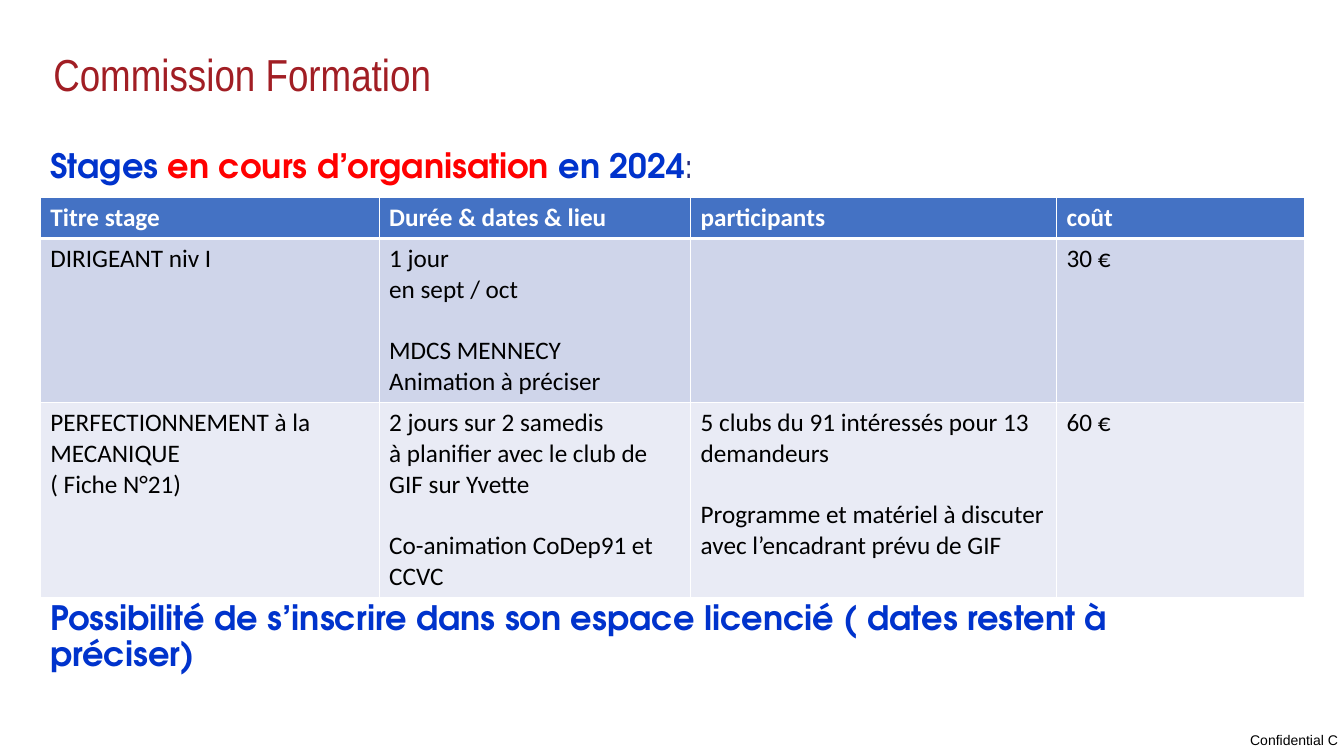
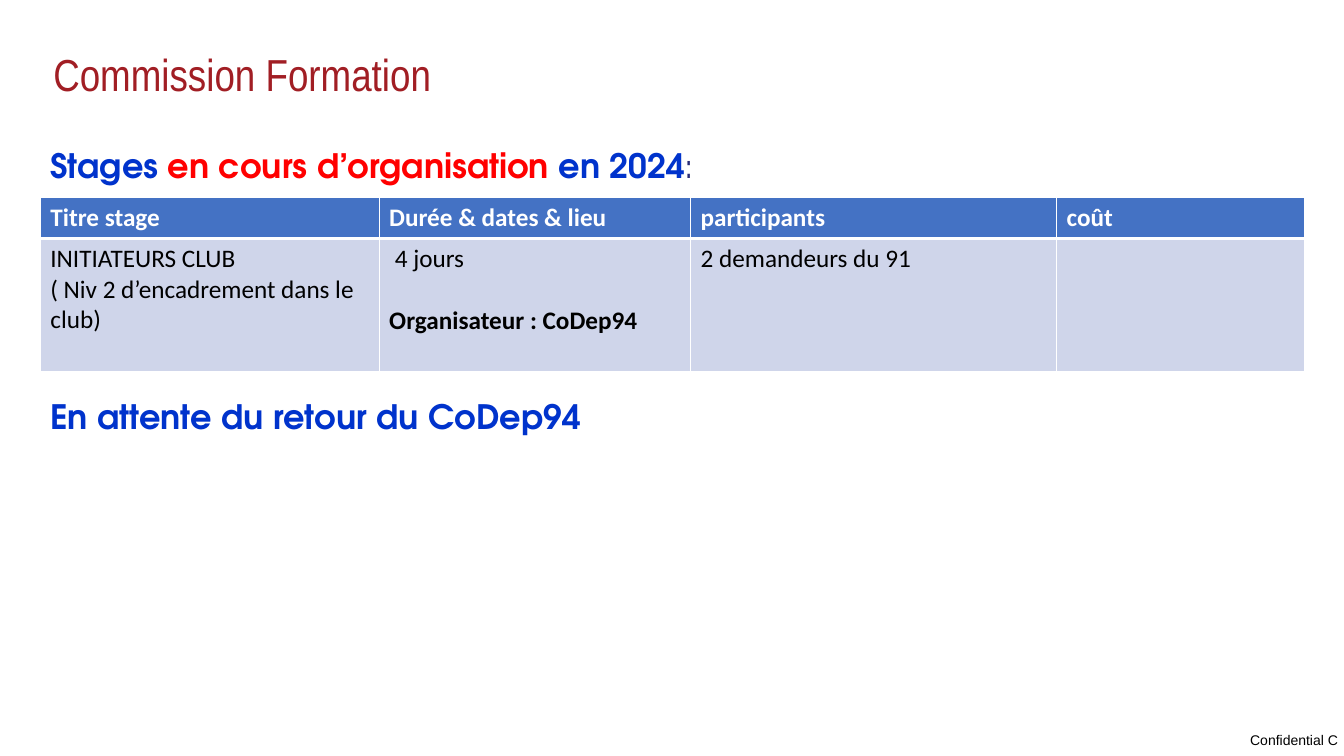
from lxml.etree import SubElement
from pptx import Presentation
from pptx.dml.color import RGBColor
from pptx.enum.text import MSO_ANCHOR
from pptx.oxml.ns import qn
from pptx.util import Inches, Pt

# Colours
WHITE = RGBColor(0xFF, 0xFF, 0xFF)
BLACK = RGBColor(0x00, 0x00, 0x00)
CRIMSON = RGBColor(0xA1, 0x1E, 0x24)
BLUE = RGBColor(0x00, 0x33, 0xCC)
RED = RGBColor(0xFF, 0x00, 0x00)
NAVY = RGBColor(0x29, 0x2D, 0x78)
HEADER_FILL = RGBColor(0x44, 0x72, 0xC4)
BAND_FILLS = (RGBColor(0xCF, 0xD5, 0xEA), RGBColor(0xE9, 0xEB, 0xF5))

# Fonts
TITLE_FONT = "Arial Narrow"
STATEMENT_FONT = "TeX Gyre Adventor"
TABLE_FONT = "Calibri"
FOOTER_FONT = "Arial"

# Slide size and table grid, in percent of the slide
SLIDE_W, SLIDE_H = Inches(13.33), Inches(7.5)
MARGIN = 3
STATEMENT_W = 83.95
TABLE_TOP = 26.13
COLUMNS = (25.21, 23.18, 27.23, 18.45)
TABLE_LINE = Pt(22)
CELL_PADDING = Inches(0.1)

# Content: a blank line in a cell is a gap, ** starts a bold line
HEADER = ("Titre stage", "Durée & dates & lieu", "participants", "coût")
HEADING = (("Stages ", BLUE, True), ("en cours d’organisation ", RED, True),
           ("en 2024", BLUE, True), (":", NAVY, False))
PLANNED_COURSES = (
    (5, ("DIRIGEANT niv I",
         "1 jour\nen sept / oct\n\nMDCS MENNECY\nAnimation à préciser",
         "", "30 €")),
    (6, ("PERFECTIONNEMENT à la MECANIQUE\n( Fiche N°21)",
         "2 jours sur 2 samedis\nà planifier avec le club de GIF sur Yvette"
         "\n\nCo-animation CoDep91 et CCVC",
         "5 clubs du 91 intéressés pour 13 demandeurs"
         "\n\nProgramme et matériel à discuter avec l’encadrant prévu de GIF",
         "60 €")),
)
CLUB_COURSES = (
    (4, ("INITIATEURS CLUB\n( Niv 2 d’encadrement dans le club)",
         " 4 jours\n\n**Organisateur : CoDep94",
         "2 demandeurs du 91", "")),
)


def across(percent):
    return round(SLIDE_W * percent / 100)


def down(percent):
    return round(SLIDE_H * percent / 100)


def style(font, name, size, color=None, bold=False):
    font.name, font.size, font.bold = name, Pt(size), bold
    if color is not None:
        font.color.rgb = color


def add_text_frame(slide, left, top, width, height):
    box = slide.shapes.add_textbox(across(left), down(top), across(width), down(height))
    box.text_frame.word_wrap = True
    return box.text_frame


def add_title(slide, text):
    frame = add_text_frame(slide, 3.23, 5.2, 80.72, 10)
    frame.vertical_anchor = MSO_ANCHOR.MIDDLE
    title = frame.paragraphs[0]
    title.text = text
    title.line_spacing = 0.9
    style(title.font, TITLE_FONT, 32, CRIMSON)


def add_footer(slide, text):
    frame = add_text_frame(slide, 93.02, 96.8, 6.83, 2.27)
    frame.word_wrap = False
    frame.margin_left = frame.margin_right = 0
    frame.margin_top = frame.margin_bottom = 0
    footer = frame.paragraphs[0]
    footer.text = text
    style(footer.font, FOOTER_FONT, 10, BLACK)


def add_statement(slide, top, parts):
    """A large line made of (text, colour, bold) parts."""
    statement = add_text_frame(slide, MARGIN, top, STATEMENT_W, 6.67).paragraphs[0]
    statement.line_spacing = 0.9
    style(statement.font, STATEMENT_FONT, 24)
    for text, color, bold in parts:
        run = statement.add_run()
        run.text = text
        style(run.font, STATEMENT_FONT, 24, color, bold)


def set_borders(cell, top, bottom):
    properties = cell._tc.get_or_add_tcPr()
    for side, points in (("L", 1), ("R", 1), ("T", top), ("B", bottom)):
        line = SubElement(properties, qn(f"a:ln{side}"), w=str(Pt(points)))
        fill = SubElement(line, qn("a:solidFill"))
        SubElement(fill, qn("a:srgbClr"), val=str(WHITE))


def fill_cell(cell, text, fill, color, bold):
    cell.fill.solid()
    cell.fill.fore_color.rgb = fill
    paragraph, gap = cell.text_frame.paragraphs[0], False
    for index, line in enumerate(text.split("\n")):
        if not line:
            gap = True
            continue
        if index:
            paragraph = cell.text_frame.add_paragraph()
        paragraph.text = line.removeprefix("**")
        if gap:
            paragraph.space_before = TABLE_LINE
        style(paragraph.font, TABLE_FONT, 18, color, bold or line.startswith("**"))
        gap = False


def add_course_table(slide, courses):
    rows = ((1, HEADER), *courses)
    heights = [lines * TABLE_LINE + CELL_PADDING for lines, _ in rows]
    table = slide.shapes.add_table(
        len(rows), len(COLUMNS), across(MARGIN), down(TABLE_TOP),
        across(sum(COLUMNS)), sum(heights)).table
    for column, width in zip(table.columns, COLUMNS):
        column.width = across(width)
    for r, (_, texts) in enumerate(rows):
        table.rows[r].height = heights[r]
        is_header = r == 0
        fill = HEADER_FILL if is_header else BAND_FILLS[(r - 1) % 2]
        for c, text in enumerate(texts):
            cell = table.cell(r, c)
            set_borders(cell, 3 if r == 1 else 1, 3 if is_header else 1)
            fill_cell(cell, text, fill, WHITE if is_header else BLACK, is_header)


def add_course_slide(prs, courses, closing, closing_top):
    slide = prs.slides.add_slide(prs.slide_layouts[6])
    add_footer(slide, "Confidential C")
    add_title(slide, "Commission Formation")
    add_statement(slide, 19.07, HEADING)
    add_statement(slide, closing_top, ((closing, BLUE, True),))
    add_course_table(slide, courses)


def main():
    prs = Presentation()
    prs.slide_width, prs.slide_height = SLIDE_W, SLIDE_H
    add_course_slide(
        prs, PLANNED_COURSES,
        "Possibilité de s’inscrire dans son espace licencié ( dates restent à préciser)",
        78.93)
    add_course_slide(prs, CLUB_COURSES, "En attente du retour du CoDep94", 52.27)
    prs.save("out.pptx")


if __name__ == "__main__":
    main()
